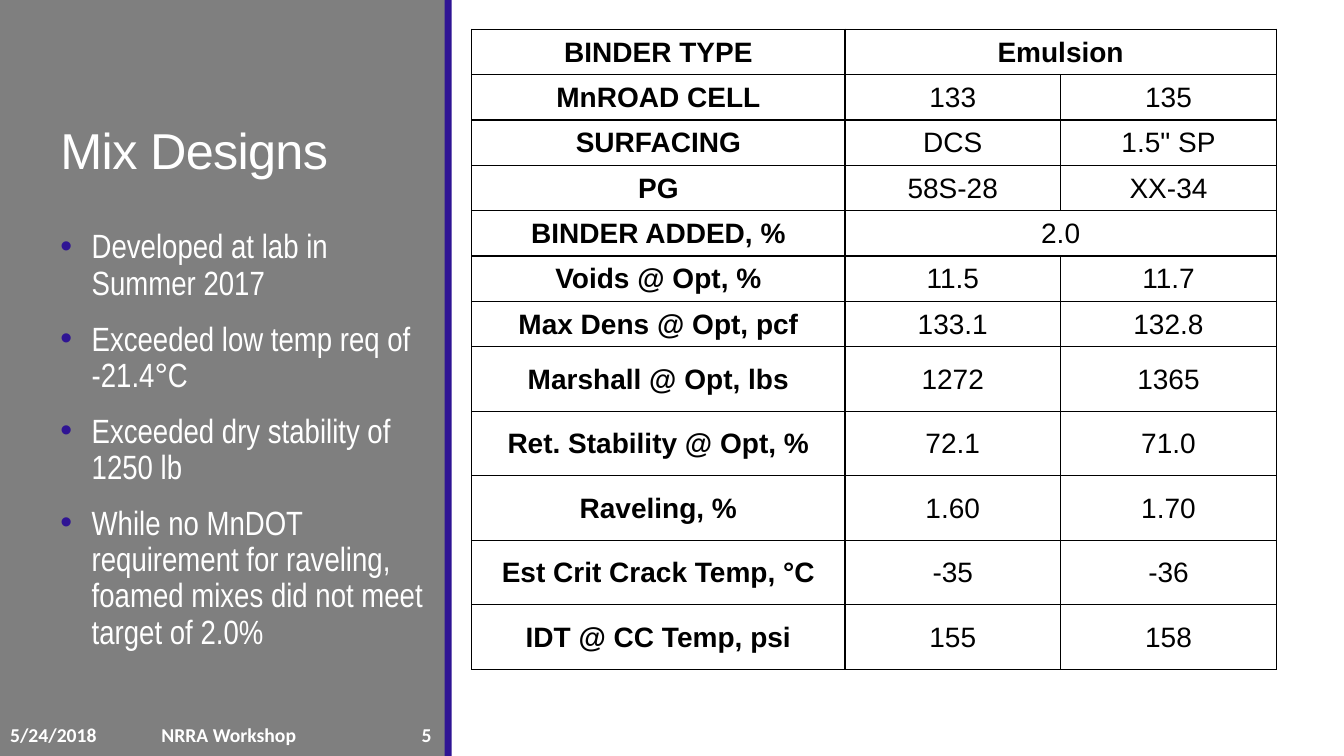
from lxml import etree
from pptx import Presentation
from pptx.dml.color import RGBColor
from pptx.enum.shapes import MSO_SHAPE as SHAPE
from pptx.enum.text import MSO_ANCHOR as ANCHOR, MSO_AUTO_SIZE as AUTO, PP_ALIGN as ALIGN
from pptx.oxml import parse_xml
from pptx.oxml.ns import nsdecls, qn
from pptx.util import Pt

PX = 9144
WHITE, BLACK, GRAY, INDIGO = "FFFFFF", "000000", "7F7F7F", "2F1494"
NO_STYLE = "{2D5ABB26-0587-4C30-8999-92F81FD0307C}"
BULLETS = [
    "Developed at lab in Summer 2017",
    "Exceeded low temp req of -21.4°C",
    "Exceeded dry stability of 1250 lb",
    "While no MnDOT requirement for raveling, foamed mixes did not meet target of 2.0%",
]
MIX_ROWS = [
    ("BINDER TYPE", "Emulsion"),
    ("MnROAD CELL", "133", "135"),
    ("SURFACING", "DCS", "1.5\" SP"),
    ("PG", "58S-28", "XX-34"),
    ("BINDER ADDED, %", "2.0"),
    ("Voids @ Opt, %", "11.5", "11.7"),
    ("Max Dens @ Opt, pcf", "133.1", "132.8"),
    ("Marshall @ Opt, lbs", "1272", "1365"),
    ("Ret. Stability @ Opt, %", "72.1", "71.0"),
    ("Raveling, %", "1.60", "1.70"),
    ("Est Crit Crack Temp, °C", "-35", "-36"),
    ("IDT @ CC Temp, psi", "155", "158"),
]
FOOTER = [("5/24/2018", ALIGN.LEFT), ("NRRA Workshop", ALIGN.CENTER), ("5", ALIGN.RIGHT)]


def emu(*lengths):
    """Turn px lengths into EMU."""
    return [n * PX for n in lengths]


def rgb(color):
    """Return the colour for a hex string."""
    return RGBColor.from_string(color)


def add_run(p, text, font, size, color, bold=False):
    """Add one formatted run to a paragraph."""
    r = p.add_run()
    r.text = text
    r.font.name, r.font.size, r.font.bold = font, Pt(size), bold
    r.font.color.rgb = rgb(color)
    return r


def add_bar(slide, x, y, w, h, color):
    """Draw a plain filled rectangle."""
    sp = slide.shapes.add_shape(SHAPE.RECTANGLE, *emu(x, y, w, h))
    sp.shadow.inherit = False
    sp.fill.solid()
    sp.fill.fore_color.rgb = rgb(color)
    sp.line.fill.background()
    return sp


def place(sp, box, anchor):
    """Move a placeholder to a box and return its text frame."""
    sp.left, sp.top, sp.width, sp.height = emu(*box)
    tf = sp.text_frame
    tf.word_wrap, tf.auto_size, tf.vertical_anchor = True, AUTO.NONE, anchor
    return tf


def add_plain_table(slide, x, y, widths, heights):
    """Add a table without style, with the given column and row sizes."""
    box = emu(x, y, sum(widths), sum(heights))
    frame = slide.shapes.add_table(len(heights), len(widths), *box)
    table = frame.table
    table.first_row = table.horz_banding = False
    frame._element.find(".//" + qn("a:tableStyleId")).text = NO_STYLE
    for col, w in zip(table.columns, widths):
        col.width = w * PX
    for row, h in zip(table.rows, heights):
        row.height = h * PX
    for cell in table.iter_cells():
        cell.vertical_anchor = ANCHOR.MIDDLE
        cell.fill.background()
    return table


def outline(cell, color, width):
    """Draw a line on all four sides of a cell."""
    tcPr = cell._tc.get_or_add_tcPr()
    for i, side in enumerate("LRTB"):
        tcPr.insert(i, parse_xml(
            f'<a:ln{side} {nsdecls("a")} w="{Pt(width)}"><a:solidFill>'
            f'<a:srgbClr val="{color}"/></a:solidFill></a:ln{side}>'))


def add_bullet(p, indent, color):
    """Give a paragraph a coloured hanging bullet."""
    pPr = p._p.get_or_add_pPr()
    pPr.set("marL", str(indent * PX))
    pPr.set("indent", str(-indent * PX))
    clr = etree.SubElement(pPr, qn("a:buClr"))
    etree.SubElement(clr, qn("a:srgbClr"), val=color)
    etree.SubElement(pPr, qn("a:buFont"), typeface="Arial")
    etree.SubElement(pPr, qn("a:buChar"), char="•")


def side_panel(slide, x, y, w, h):
    """Build the gray panel with its edge, title, list and footer."""
    panel = add_bar(slide, x, y, w, h, GRAY)
    edge = add_bar(slide, x + w - 1, y, 7, h, INDIGO)
    for i, sp in enumerate((panel, edge)):
        slide.shapes._spTree.insert(2 + i, sp._element)

    tf = place(slide.shapes.title, (x + 50, y + 20, 350, 163), ANCHOR.BOTTOM)
    p = tf.paragraphs[0]
    p.alignment, p.line_spacing = ALIGN.LEFT, 0.85
    r = add_run(p, "Mix Designs", "Arial", 36, WHITE)
    r.font._element.set("spc", "-50")

    tf = place(slide.placeholders[1], (x + 50, y + 223, 384, 467), ANCHOR.TOP)
    for i, text in enumerate(BULLETS):
        p = tf.add_paragraph() if i else tf.paragraphs[0]
        add_bullet(p, 31, INDIGO)
        p.alignment, p.line_spacing = ALIGN.LEFT, 0.9
        p.space_before, p.space_after = Pt(12 if i else 0), Pt(2)
        add_run(p, text, "Arial Narrow", 24, WHITE)

    table = add_plain_table(slide, x, y + h - 37, [115, 224, 99], [33])
    for cell, (text, align) in zip(table.iter_cells(), FOOTER):
        p = cell.text_frame.paragraphs[0]
        p.alignment = align
        add_run(p, text, "Calibri", 14, WHITE, True)


def mix_table(slide, x, y, w):
    """Build the table of mix design values."""
    value_w = 214
    widths = [w - 2 * value_w, value_w, value_w]
    table = add_plain_table(slide, x, y, widths, [45] * 7 + [64] * 5)
    for cell in table.iter_cells():
        outline(cell, BLACK, 1)
        cell.margin_left = cell.margin_right = cell.margin_top = PX
        cell.margin_bottom = 0
    for i, texts in enumerate(MIX_ROWS):
        if len(texts) == 2:
            table.cell(i, 1).merge(table.cell(i, 2))
        for j, text in enumerate(texts):
            p = table.cell(i, j).text_frame.paragraphs[0]
            p.alignment = ALIGN.CENTER
            add_run(p, text, "Arial", 20, BLACK, i == 0 or j == 0)


def main():
    """Build and save the slide."""
    prs = Presentation()
    prs.slide_width, prs.slide_height = emu(1333, 750)
    slide = prs.slides.add_slide(prs.slide_layouts[1])
    side_panel(slide, 0, 0, 442, 750)
    mix_table(slide, 468, 29, 798)
    prs.save("out.pptx")


if __name__ == "__main__":
    main()
